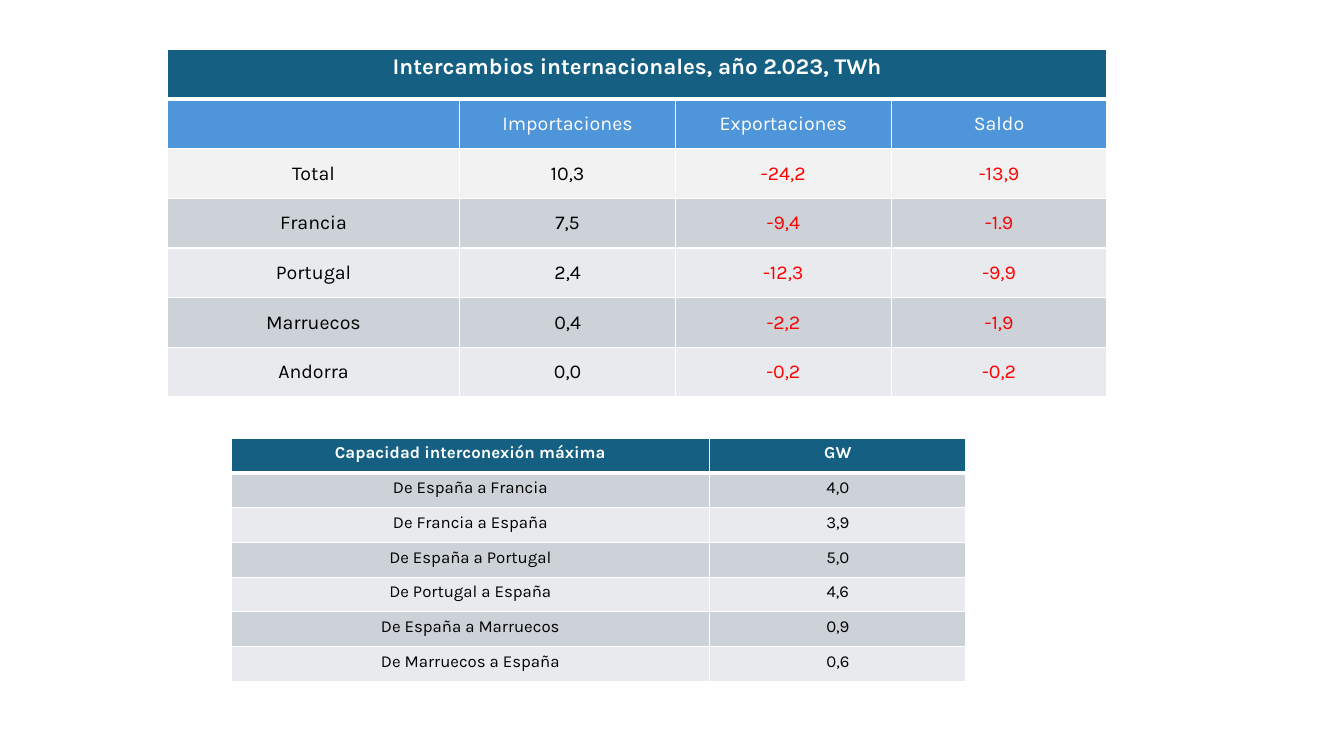
from lxml.etree import SubElement as Sub
from pptx import Presentation
from pptx.dml.color import RGBColor as Rgb
from pptx.enum.text import MSO_ANCHOR as Anchor, PP_ALIGN as Align
from pptx.oxml.ns import qn
from pptx.util import Inches, Pt

HUES = {"white": "FFFFFF", "black": "000000", "red": "FF0000",
        "navy": "156082", "blue": "4E95D9", "pale": "F2F2F2",
        "dark": "CCD2D8", "light": "E8EAED"}
TRADE = [
    ["Intercambios internacionales, año 2.023, TWh", "", "", ""],
    ["", "Importaciones", "Exportaciones", "Saldo"],
    ["Total", "10,3", "-24,2", "-13,9"],
    ["Francia", "7,5", "-9,4", "-1.9"],
    ["Portugal", "2,4", "-12,3", "-9,9"],
    ["Marruecos", "0,4", "-2,2", "-1,9"],
    ["Andorra", "0,0", "-0,2", "-0,2"],
]
LINKS = [
    ["Capacidad interconexión máxima", "GW"],
    ["De España a Francia", "4,0"],
    ["De Francia a España", "3,9"],
    ["De España a Portugal", "5,0"],
    ["De Portugal a España", "4,6"],
    ["De España a Marruecos", "0,9"],
    ["De Marruecos a España", "0,6"],
]


def color(name):
    return Rgb.from_string(HUES[name])


def edge(cell, row):
    """Draw white borders, with a thick rule between the first two rows."""
    props = cell._tc.get_or_add_tcPr()
    thick = {(0, "B"), (1, "T")}
    for side in "LRTB":
        width = Pt(3 if (row, side) in thick else 1)
        line = Sub(props, qn(f"a:ln{side}"), w=str(width))
        Sub(Sub(line, qn("a:solidFill")), qn("a:srgbClr"), val=HUES["white"])


def write(cell, text, look):
    para = cell.text_frame.paragraphs[0]
    para.alignment = Align.CENTER
    if not text:
        return
    run = para.add_run()
    run.text = text
    for key, value in look.items():
        setattr(run.font, key, value)


def grid(slide, box, shares, data, fills, size):
    """Fill the box with a table whose columns take the given shares."""
    left, top, width, height = box
    table = slide.shapes.add_table(len(data), len(shares), *map(Inches, box)).table
    for col, share in zip(table.columns, shares):
        col.width = Inches(width * share / sum(shares))
    for r, (row, fill) in enumerate(zip(data, fills)):
        table.rows[r].height = Inches(height / len(data))
        for c, text in enumerate(row):
            cell = table.cell(r, c)
            edge(cell, r)
            cell.fill.solid()
            cell.fill.fore_color.rgb = color(fill)
            ink = "white" if fill in ("navy", "blue") else "black"
            look = {"name": "Karla", "size": Pt(size), "bold": r == 0}
            write(cell, text, look)
            for run in cell.text_frame.paragraphs[0].runs:
                run.font.color.rgb = color("red" if text[0] == "-" else ink)
    return table


def trade(slide, box):
    fills = ["navy", "blue", "pale"] + ["dark", "light"] * 2
    table = grid(slide, box, [2.9, 2.14, 2.14, 2.14], TRADE, fills, 14)
    title = table.cell(0, 0)
    title.merge(table.cell(0, 3))
    title.text_frame.paragraphs[0].runs[0].font.size = Pt(16)
    for r in range(1, len(TRADE)):
        for cell in table.rows[r].cells:
            cell.vertical_anchor = Anchor.MIDDLE


def links(slide, box):
    fills = ["navy"] + ["dark", "light"] * 3
    grid(slide, box, [4.75, 2.54], LINKS, fills, 12)


def main():
    deck = Presentation()
    deck.slide_width, deck.slide_height = Inches(13.33), Inches(7.5)
    slide = deck.slides.add_slide(deck.slide_layouts[6])
    trade(slide, (1.66, 0.49, 9.32, 3.45))
    links(slide, (2.29, 4.35, 7.29, 2.41))
    deck.save("out.pptx")


if __name__ == "__main__":
    main()
